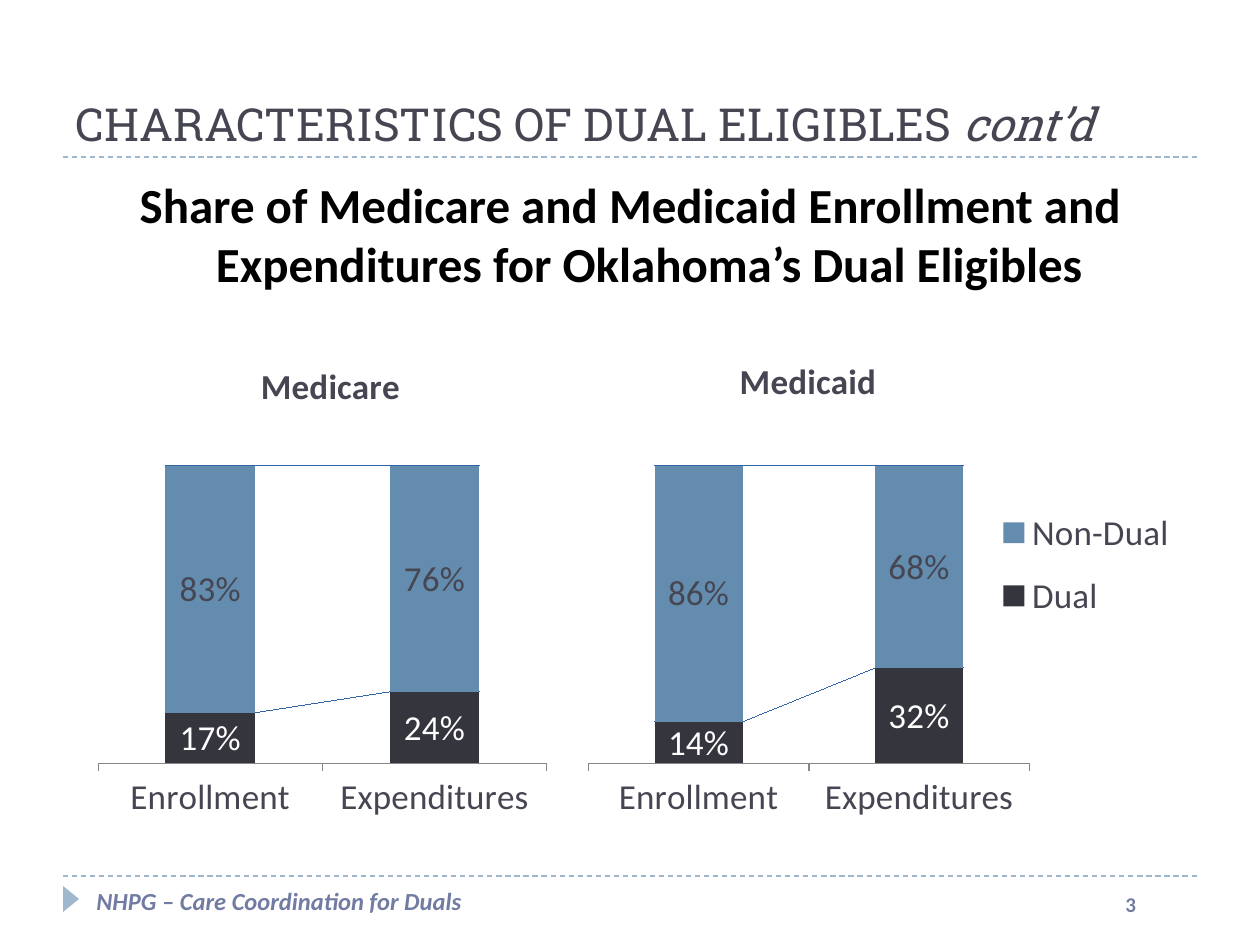
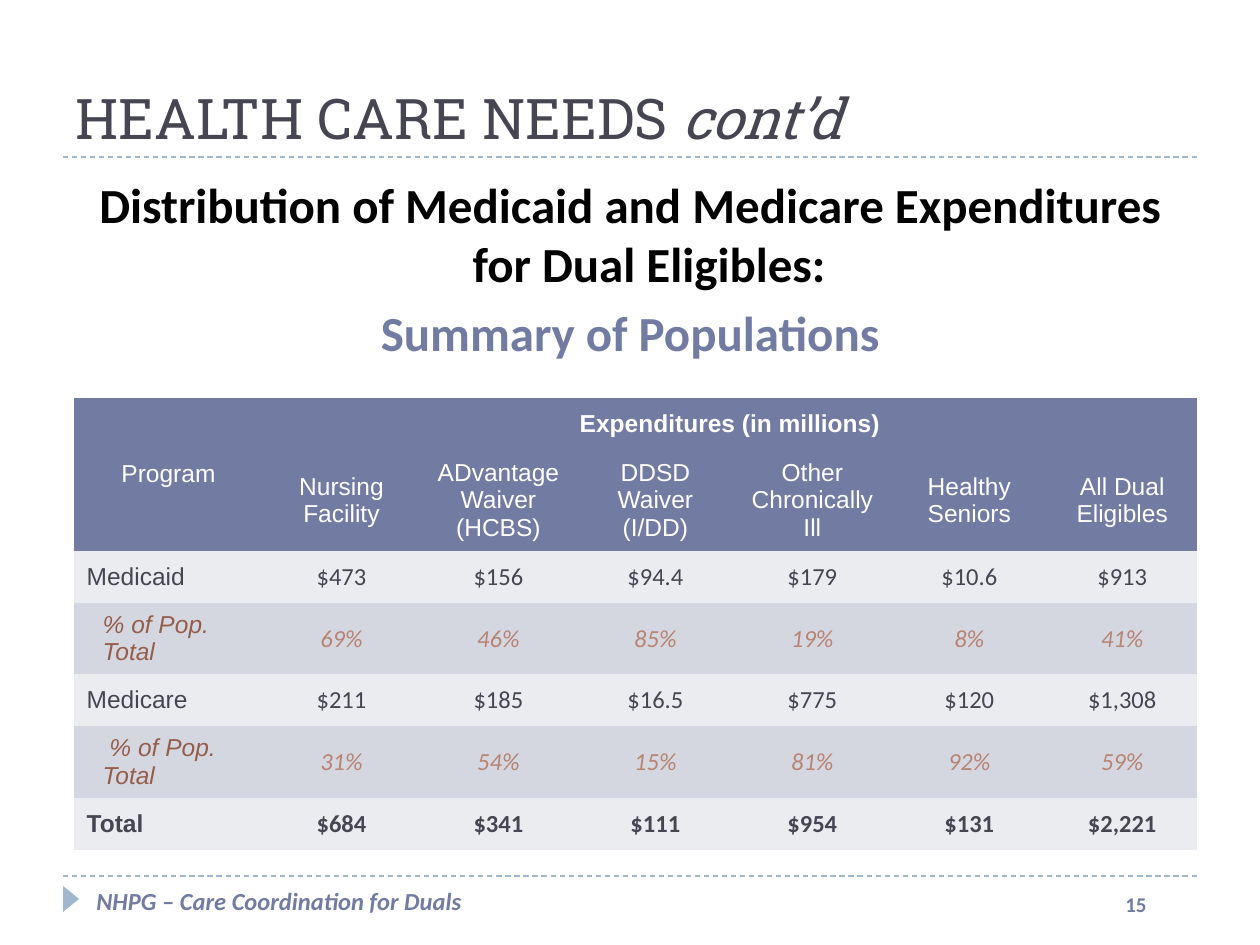
from lxml import etree
from pptx import Presentation
from pptx import util as u
from pptx.chart.data import CategoryChartData
from pptx.dml.color import RGBColor
from pptx.enum import chart as charts, dml, shapes, text
from pptx.oxml.ns import qn

EMU_PER_PX = 914400 / 126

INK = RGBColor(0x46, 0x46, 0x53)
BLACK = RGBColor(0, 0, 0)
WHITE = RGBColor(255, 255, 255)
INDIGO = RGBColor(0x72, 0x7C, 0xA3)
MIST = RGBColor(0x9F, 0xB8, 0xCD)
DUAL = RGBColor(0x35, 0x35, 0x3E)
NON_DUAL = RGBColor(0x63, 0x8C, 0xAE)
ROW_LIGHT = RGBColor(0xEB, 0xEC, 0xF0)
ROW_DARK = RGBColor(0xD5, 0xD7, 0xE0)
BROWN = RGBColor(0x95, 0x5E, 0x4B)
CLAY = RGBColor(0xB8, 0x84, 0x72)

TITLE_FONT, BODY_FONT, TABLE_FONT = "Roboto Slab", "Calibri", "Arial"
NO_TABLE_STYLE = "{2D5ABB26-0587-4C30-8999-92F81FD0307C}"
FOOTER = "NHPG – Care Coordination for Duals"
LEFT, RIGHT = 63, 1197


def px(length):
    return u.Emu(round(length * EMU_PER_PX))


def box(left, top, width, height):
    return px(left), px(top), px(width), px(height)


def style_font(font, size, color, name=BODY_FONT, bold=False, italic=False):
    font.size, font.name = u.Pt(size), name
    font.bold, font.italic = bold, italic
    font.color.rgb = color


def write(paragraph, words, align=None, **font_format):
    """Add a formatted run to a paragraph."""
    run = paragraph.add_run()
    run.text = words
    style_font(run.font, **font_format)
    if align is not None:
        paragraph.alignment = align


def indent(paragraph, left, first=0):
    properties = paragraph._p.get_or_add_pPr()
    properties.set("marL", str(px(left)))
    properties.set("indent", str(px(first)))
    return properties


# Shared frame: rules, footer, title and heading
def add_rule(slide, y):
    rule = slide.shapes.add_connector(shapes.MSO_CONNECTOR.STRAIGHT,
                                      px(LEFT), px(y), px(RIGHT), px(y))
    rule.line.color.rgb = MIST
    rule.line.width = u.Pt(0.75)
    rule.line.dash_style = dml.MSO_LINE.DASH
    etree.SubElement(rule._element.spPr, qn("a:effectLst"))


def add_label(slide, frame, words, **font_format):
    label = slide.shapes.add_textbox(*box(*frame))
    label.text_frame.word_wrap = True
    write(label.text_frame.paragraphs[0], words, color=INDIGO, bold=True, **font_format)


def add_footer(slide, top, number):
    add_rule(slide, top)
    marker = slide.shapes.add_shape(shapes.MSO_SHAPE.ISOSCELES_TRIANGLE,
                                    *box(58, top + 15, 26, 16))
    marker.rotation = 90
    marker.shadow.inherit = False
    marker.fill.solid()
    marker.fill.fore_color.rgb = MIST
    marker.line.fill.background()
    add_label(slide, (1113, top + 9, 73, 50), str(number), size=12)
    add_label(slide, (84, top + 4, 567, 65), FOOTER, size=14, italic=True)


def place(shape, frame):
    shape.left, shape.top, shape.width, shape.height = box(*frame)
    shape.text_frame.auto_size = text.MSO_AUTO_SIZE.NONE
    shape.text_frame.word_wrap = True


def fill_title(slide, words, size):
    title = slide.shapes.title
    place(title, (LEFT, 21, RIGHT - LEFT, 136))
    title.text_frame.vertical_anchor = text.MSO_ANCHOR.BOTTOM
    paragraph = title.text_frame.paragraphs[0]
    for part, italic in ((words + " ", False), ("cont’d", True)):
        write(paragraph, part, align=text.PP_ALIGN.LEFT, size=size, color=INK,
              name=TITLE_FONT, italic=italic)


def fill_heading(slide, lines, height):
    body = slide.placeholders[1]
    place(body, (LEFT, 168, RIGHT - LEFT, height))
    frame = body.text_frame
    for index, (words, color) in enumerate(lines):
        paragraph = frame.add_paragraph() if index else frame.paragraphs[0]
        paragraph.space_before = u.Pt(6)
        etree.SubElement(indent(paragraph, 38, -38), qn("a:buNone"))
        write(paragraph, words, align=text.PP_ALIGN.CENTER, size=28, color=color, bold=True)


def start_slide(presentation, title, title_size, number, heading, heading_height):
    slide = presentation.slides.add_slide(presentation.slide_layouts[1])
    add_rule(slide, 157)
    add_footer(slide, 876, number)
    fill_title(slide, title, title_size)
    fill_heading(slide, heading, heading_height)
    return slide


# Charts
def set_layout(parent, index, x, y, width=None, height=None, inner=False):
    """Give a chart part a manual place, as fractions of the chart."""
    for old in parent.findall(qn("c:layout")):
        parent.remove(old)
    layout = etree.Element(qn("c:layout"))
    manual = etree.SubElement(layout, qn("c:manualLayout"))
    settings = [("layoutTarget", "inner")] if inner else []
    settings += [("xMode", "edge"), ("yMode", "edge"), ("x", x), ("y", y)]
    if width:
        settings += [("w", width), ("h", height)]
    for tag, value in settings:
        etree.SubElement(manual, qn("c:" + tag)).set("val", str(value))
    parent.insert(index, layout)


def add_share_chart(slide, frame, name, series, plot_box, title_place, legend_box=None):
    data = CategoryChartData(number_format="0%")
    data.categories = ["Enrollment", "Expenditures"]
    for series_name, values in series:
        data.add_series(series_name, values)
    chart = slide.shapes.add_chart(charts.XL_CHART_TYPE.COLUMN_STACKED,
                                   *box(*frame), data).chart
    style_font(chart.font, 20, INK)

    write(chart.chart_title.text_frame.paragraphs[0], name, size=20, color=INK, bold=True)
    title = chart.chart_title._element
    set_layout(title, 1, *title_place)
    title.find(qn("c:overlay")).set("val", "1")
    set_layout(chart._chartSpace.chart.plotArea, 0, *plot_box, inner=True)

    chart.has_legend = legend_box is not None
    if legend_box:
        chart.legend.position = charts.XL_LEGEND_POSITION.RIGHT
        chart.legend.include_in_layout = False
        style_font(chart.legend.font, 20, INK)
        set_layout(chart.legend._element, 1, *legend_box)

    chart.value_axis.visible = False
    chart.value_axis.has_major_gridlines = False
    chart.value_axis.minimum_scale, chart.value_axis.maximum_scale = 0, 1.2
    chart.category_axis.major_tick_mark = charts.XL_TICK_MARK.OUTSIDE
    style_font(chart.category_axis.tick_labels.font, 20, INK)

    plot = chart.plots[0]
    plot.gap_width, plot.overlap = 150, 100
    plot.vary_by_categories = False
    overlap = plot._element.find(qn("c:overlap"))
    overlap.addnext(etree.Element(qn("c:serLines")))
    for part, fill, label_color in zip(plot.series, (DUAL, NON_DUAL), (WHITE, INK)):
        part.format.fill.solid()
        part.format.fill.fore_color.rgb = fill
        labels = part.data_labels
        labels.show_value = True
        labels.number_format, labels.number_format_is_linked = "0%", False
        style_font(labels.font, 20, label_color)


def build_share_slide(presentation):
    heading = "Share of Medicare and Medicaid Enrollment and Expenditures for Oklahoma’s Dual Eligibles"
    slide = start_slide(presentation, "CHARACTERISTICS OF DUAL ELIGIBLES", 26, 3,
                        [(heading, BLACK)], 703)
    add_share_chart(slide, (73, 325, 504, 504), "Medicare",
                    [("Series 1", (0.17, 0.24)), ("Series 2", (0.83, 0.76))],
                    (0.05, 0.16, 0.89, 0.71), (0.36, 0.06))
    add_share_chart(slide, (557, 325, 630, 504), "Medicaid",
                    [("Dual", (0.14, 0.32)), ("Non-Dual", (0.86, 0.68))],
                    (0.05, 0.16, 0.7, 0.71), (0.28, 0.05), (0.7, 0.33, 0.28, 0.29))


# Expenditure table
POPULATIONS = ["Nursing Facility", "ADvantage Waiver (HCBS)", "DDSD Waiver (I/DD)",
               "Other Chronically Ill", "Healthy Seniors", "All Dual Eligibles"]
EXPENDITURES = [
    ("Medicaid", "$473 $156 $94.4 $179 $10.6 $913"),
    ("% of Pop. Total", "69% 46% 85% 19% 8% 41%"),
    ("Medicare", "$211 $185 $16.5 $775 $120 $1,308"),
    (" % of Pop. Total", "31% 54% 15% 81% 92% 59%"),
    ("Total", "$684 $341 $111 $954 $131 $2,221"),
]


def fill_cell(cell, words, fill, tight=False, **font_format):
    cell.fill.solid()
    cell.fill.fore_color.rgb = fill
    cell.vertical_anchor = text.MSO_ANCHOR.MIDDLE
    if tight:
        cell.margin_left = cell.margin_right = cell.margin_top = cell.margin_bottom = 0
    paragraph = cell.text_frame.paragraphs[0]
    write(paragraph, words, size=14, **font_format)
    return paragraph


def add_expenditure_table(slide, left, top):
    widths = [189] + [157] * 5 + [149]
    row_height, row_count = 52, 2 + len(EXPENDITURES)
    table = slide.shapes.add_table(row_count, len(widths), *box(
        left, top, sum(widths), row_height * row_count)).table
    table._tbl.tblPr.find(qn("a:tableStyleId")).text = NO_TABLE_STYLE
    for column, width in zip(table.columns, widths):
        column.width = px(width)
    for row in table.rows:
        row.height = px(row_height)

    # Header rows
    header = dict(fill=INDIGO, color=WHITE, name=TABLE_FONT, align=text.PP_ALIGN.CENTER)
    table.cell(0, 0).merge(table.cell(1, 0))
    table.cell(0, 1).merge(table.cell(0, len(POPULATIONS)))
    fill_cell(table.cell(0, 0), "Program", **header)
    fill_cell(table.cell(0, 1), "Expenditures (in millions)", bold=True, **header)
    for column, population in enumerate(POPULATIONS, 1):
        fill_cell(table.cell(1, column), population, **header)

    # Program rows
    for row, (program, amounts) in enumerate(EXPENDITURES, 2):
        share = "%" in program
        look = dict(fill=ROW_DARK if share else ROW_LIGHT, italic=share,
                    bold=program == "Total")
        paragraph = fill_cell(table.cell(row, 0), program, name=TABLE_FONT,
                              color=BROWN if share else INK, **look)
        if share:
            indent(paragraph, 16)
        for column, amount in enumerate(amounts.split(), 1):
            fill_cell(table.cell(row, column), amount, tight=True,
                      color=CLAY if share else INK, align=text.PP_ALIGN.CENTER, **look)


def build_needs_slide(presentation):
    heading = [("Distribution of Medicaid and Medicare Expenditures for Dual Eligibles:", BLACK),
               ("Summary of Populations", INDIGO)]
    slide = start_slide(presentation, "HEALTH CARE NEEDS", 32, 15, heading, 766)
    add_expenditure_table(slide, 74, 398)


def main():
    presentation = Presentation()
    presentation.slide_width, presentation.slide_height = px(1260), px(945)
    build_share_slide(presentation)
    build_needs_slide(presentation)
    presentation.save("out.pptx")


if __name__ == "__main__":
    main()
